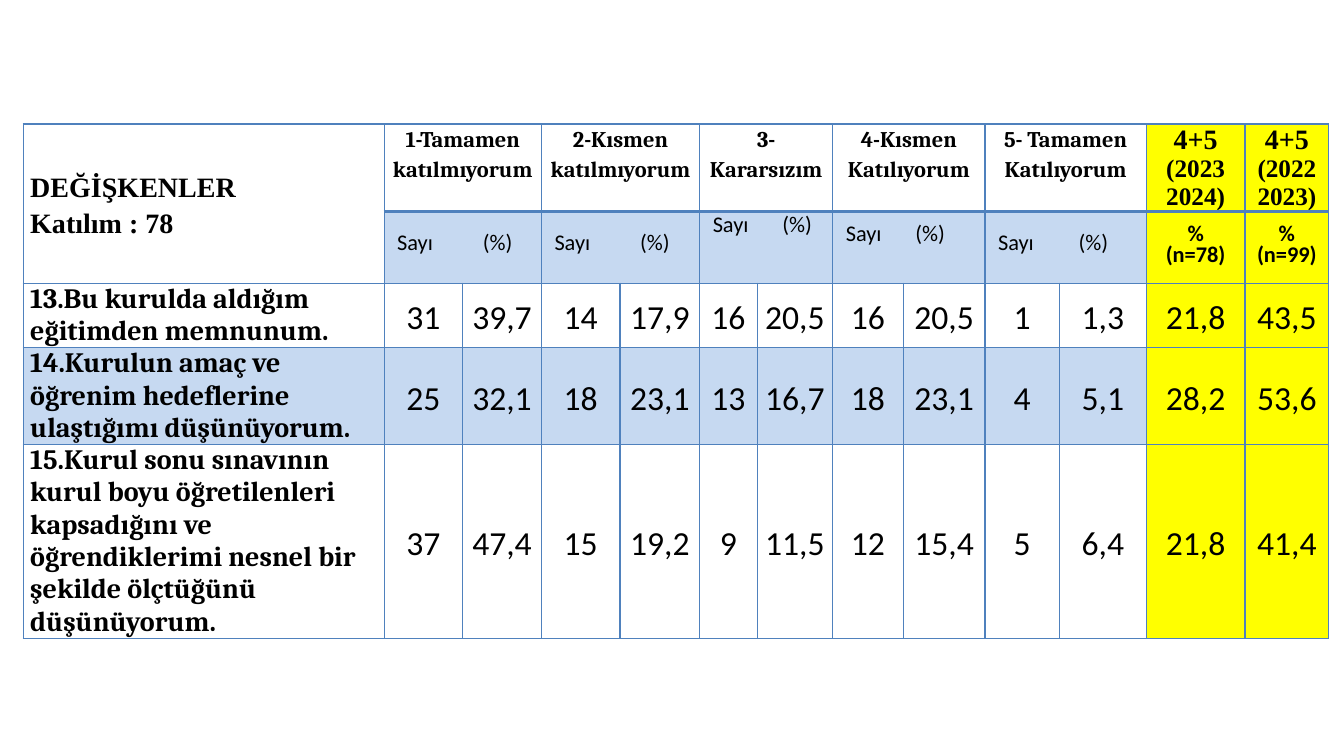
from dataclasses import dataclass, replace

from lxml.etree import SubElement
from pptx import Presentation
from pptx.dml.color import RGBColor
from pptx.enum.text import MSO_ANCHOR, PP_ALIGN
from pptx.oxml.ns import qn
from pptx.table import Table, _Cell
from pptx.util import Inches, Length, Pt

BLACK, BORDER, BAND, HIGHLIGHT = "000000", "4F81BD", "C6D9F1", "FFFF00"
COLUMN_WIDTHS = [3.58, 0.78, 0.78, 0.78, 0.79, 0.57, 0.75, 0.7, 0.81, 0.74, 0.86, 0.98, 0.83]
ROW_HEIGHTS = [0.87, 0.7, 0.64, 0.96, 1.92]
FIRST_TOTAL = 11


@dataclass(frozen=True)
class CellStyle:
    """Text formatting of a cell, with one size per paragraph."""
    font: str
    sizes: tuple[int, ...]
    bold: bool = True
    align: PP_ALIGN = PP_ALIGN.CENTER
    anchor: MSO_ANCHOR = MSO_ANCHOR.MIDDLE
    spacing: float | Length = 1.0


@dataclass(frozen=True)
class AnswerGroup:
    """One answer option with the tab and bottom margin of its subheading."""
    heading: str
    tab: float
    bottom: float = 0


@dataclass(frozen=True)
class Total:
    """One highlighted column of combined agreement."""
    heading: str
    subheading: str


@dataclass(frozen=True)
class Question:
    """One survey statement and its results."""
    statement: str
    results: str


CORNER = CellStyle("Times New Roman", (20, 20), align=PP_ALIGN.LEFT, spacing=1.15)
HEADING = CellStyle("Cambria", (16,), anchor=MSO_ANCHOR.TOP, spacing=1.15)
SUBHEADING = CellStyle("Calibri", (16,), bold=False, align=PP_ALIGN.LEFT, spacing=Pt(13))
TOTAL_HEADING = CellStyle("Times New Roman", (20, 18), anchor=MSO_ANCHOR.TOP)
TOTAL_SUBHEADING = CellStyle("Calibri", (16, 16), spacing=Pt(15))
STATEMENT = replace(HEADING, sizes=(20,), align=PP_ALIGN.LEFT, spacing=1.0)
RESULT = CellStyle("Calibri", (24,), bold=False, spacing=1.15)

GROUPS = [
    AnswerGroup("1-Tamamen katılmıyorum", 0.85),
    AnswerGroup("2-Kısmen katılmıyorum", 0.85),
    AnswerGroup("3-Kararsızım", 0.69, 0.36),
    AnswerGroup("4-Kısmen Katılıyorum", 0.69, 0.18),
    AnswerGroup("5- Tamamen Katılıyorum", 0.8),
]
TOTALS = [
    Total("4+5\n(2023 2024)", "%\n(n=78)"),
    Total("4+5\n(2022 2023)", "%\n(n=99)"),
]
QUESTIONS = [
    Question("13.Bu kurulda aldığım eğitimden memnunum.",
             "31 39,7 14 17,9 16 20,5 16 20,5 1 1,3 21,8 43,5"),
    Question("14.Kurulun amaç ve öğrenim hedeflerine ulaştığımı düşünüyorum.",
             "25 32,1 18 23,1 13 16,7 18 23,1 4 5,1 28,2 53,6"),
    Question("15.Kurul sonu sınavının kurul boyu öğretilenleri kapsadığını ve "
             "öğrendiklerimi nesnel bir şekilde ölçtüğünü düşünüyorum.",
             "37 47,4 15 19,2 9 11,5 12 15,4 5 6,4 21,8 41,4"),
]


def color(value: str) -> RGBColor:
    """Convert a hex string to a colour."""
    return RGBColor.from_string(value)


def add_border(cell: _Cell, side: str, width: float) -> None:
    """Add one solid border line to a cell."""
    line = SubElement(cell._tc.get_or_add_tcPr(), qn(f"a:ln{side}"), w=str(Pt(width)))
    SubElement(SubElement(line, qn("a:solidFill")), qn("a:srgbClr"), val=BORDER)


def dress_cell(cell: _Cell, row: int, column: int) -> None:
    """Set the borders, fill and margins that follow from a cell's place."""
    for side in "LRTB":
        heavy = column > 0 and (row, side) in ((0, "B"), (1, "T"))
        add_border(cell, side, 2.25 if heavy else 1)
    if column >= FIRST_TOTAL:
        fill = HIGHLIGHT
    elif row == 3 or (row == 1 and column > 0):
        fill = BAND
    else:
        fill = None
    if fill:
        cell.fill.solid()
        cell.fill.fore_color.rgb = color(fill)
    else:
        cell.fill.background()
    cell.margin_left = cell.margin_right = Inches(0.07)
    cell.margin_top = cell.margin_bottom = 0


def write_cell(cell: _Cell, text: str, style: CellStyle) -> None:
    """Write text into a cell and format its paragraphs."""
    cell.text_frame.text = text
    cell.vertical_anchor = style.anchor
    for para, size in zip(cell.text_frame.paragraphs, style.sizes):
        para.alignment = style.align
        para.line_spacing = style.spacing
        for span in para.runs:
            span.font.name = style.font
            span.font.size = Pt(size)
            span.font.bold = style.bold
            span.font.color.rgb = color(BLACK)


def write_group(table: Table, column: int, group: AnswerGroup) -> None:
    """Write an answer option's merged heading and subheading."""
    for row in (0, 1):
        table.cell(row, column).merge(table.cell(row, column + 1))
    write_cell(table.cell(0, column), group.heading, HEADING)
    cell = table.cell(1, column)
    write_cell(cell, "Sayı\t(%)", SUBHEADING)
    cell.margin_left = Inches(0.13)
    cell.margin_bottom = Inches(group.bottom)
    properties = cell.text_frame.paragraphs[0]._p.get_or_add_pPr()
    stops = SubElement(properties, qn("a:tabLst"))
    SubElement(stops, qn("a:tab"), pos=str(Inches(group.tab)), algn="l")


def main() -> None:
    """Build the survey results slide."""
    deck = Presentation()
    deck.slide_width, deck.slide_height = Inches(13.33), Inches(7.5)
    page = deck.slides.add_slide(deck.slide_layouts[6])
    table = page.shapes.add_table(
        len(ROW_HEIGHTS), len(COLUMN_WIDTHS), Inches(0.23), Inches(1.23),
        Inches(sum(COLUMN_WIDTHS)), Inches(sum(ROW_HEIGHTS))).table
    table.first_row = table.horz_banding = False
    for column, width in zip(table.columns, COLUMN_WIDTHS):
        column.width = Inches(width)
    for row, height in zip(table.rows, ROW_HEIGHTS):
        row.height = Inches(height)
    for row in range(len(ROW_HEIGHTS)):
        for column in range(len(COLUMN_WIDTHS)):
            dress_cell(table.cell(row, column), row, column)

    table.cell(0, 0).merge(table.cell(1, 0))
    write_cell(table.cell(0, 0), "DEĞİŞKENLER\nKatılım : 78", CORNER)
    for index, group in enumerate(GROUPS):
        write_group(table, 1 + 2 * index, group)
    for column, total in enumerate(TOTALS, FIRST_TOTAL):
        write_cell(table.cell(0, column), total.heading, TOTAL_HEADING)
        write_cell(table.cell(1, column), total.subheading, TOTAL_SUBHEADING)
    for row, question in enumerate(QUESTIONS, 2):
        write_cell(table.cell(row, 0), question.statement, STATEMENT)
        for column, result in enumerate(question.results.split(), 1):
            write_cell(table.cell(row, column), result, RESULT)
    deck.save("out.pptx")


if __name__ == "__main__":
    main()
